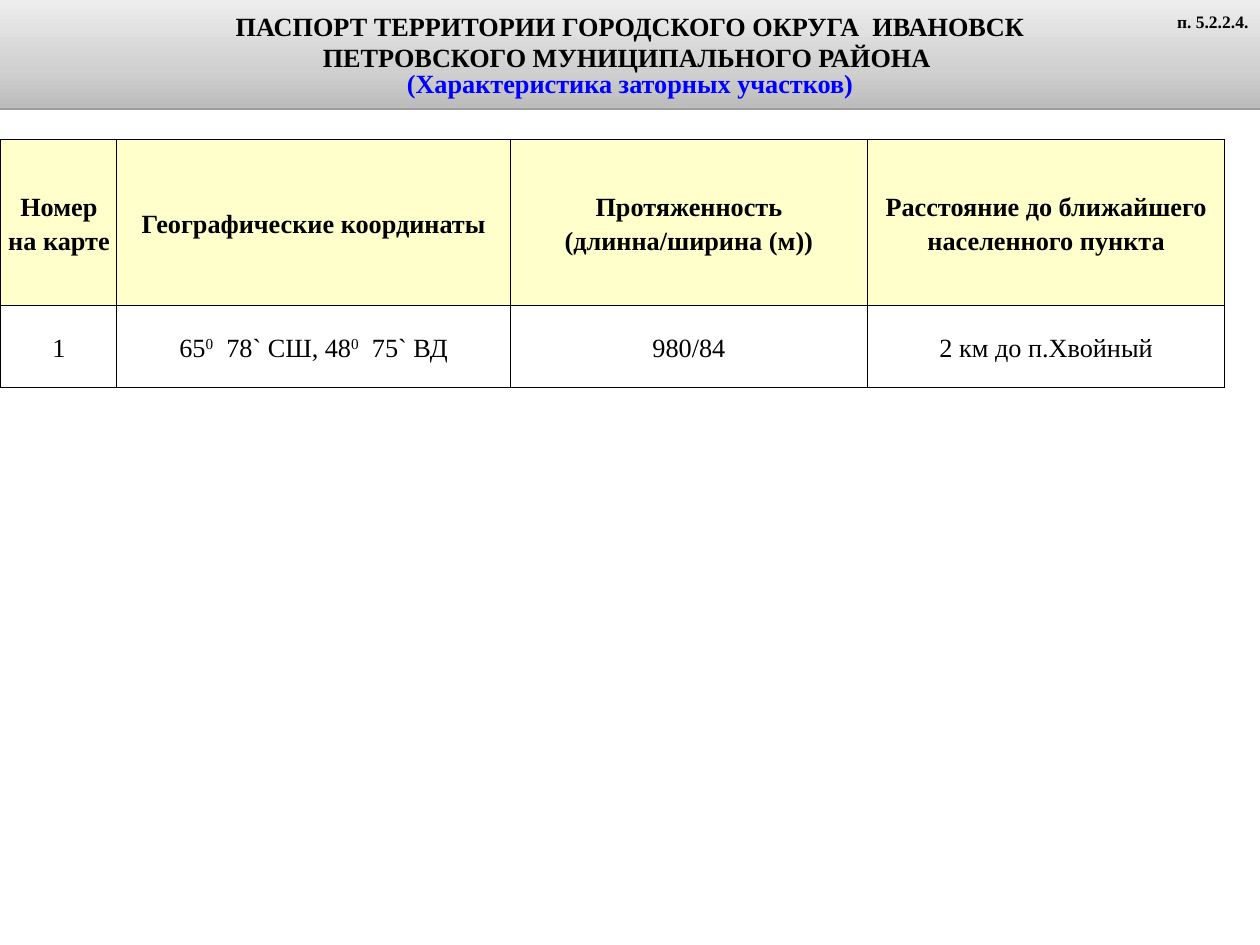
from lxml import etree
from pptx import Presentation
from pptx.dml.color import RGBColor
from pptx.enum.text import MSO_ANCHOR, MSO_AUTO_SIZE, PP_ALIGN
from pptx.util import Inches, Pt

CENTER = PP_ALIGN.CENTER
MIDDLE = MSO_ANCHOR.MIDDLE
NO_FIT = MSO_AUTO_SIZE.NONE
GROW = MSO_AUTO_SIZE.SHAPE_TO_FIT_TEXT
NS = 'xmlns:a="http://schemas.openxmlformats.org/drawingml/2006/main"'


def rgb(code):
    return RGBColor.from_string(code)


def add_run(para, text, size=21, bold=True, color="000000", raised=False):
    run = para.add_run()
    run.text = text
    font = run.font
    font.name = "Times New Roman"
    font.size = Pt(size)
    font.bold = bold
    font.color.rgb = rgb(color)
    if raised:
        run._r.get_or_add_rPr().set("baseline", "30000")


deck = Presentation()
deck.slide_width = Inches(14)
deck.slide_height = Inches(10.5)
slide = deck.slides.add_slide(deck.slide_layouts[5])

# Title banner
title = slide.shapes.title
title.left = title.top = Inches(0)
title.width, title.height = Inches(14), Inches(1.2)
stops = "".join(
    f'<a:gs pos="{pos * 1000}"><a:srgbClr val="{color}"/></a:gs>'
    for pos, color in [(0, "BCBCBC"), (35, "D0D0D0"), (100, "EDEDED")]
)
shade = f'<a:gradFill {NS}><a:gsLst>{stops}</a:gsLst><a:lin ang="16200000" scaled="1"/></a:gradFill>'
shadow = (
    f'<a:effectLst {NS}><a:outerShdw blurRad="0" dist="{Pt(1.6)}" dir="5400000" rotWithShape="0">'
    '<a:srgbClr val="000000"><a:alpha val="38000"/></a:srgbClr></a:outerShdw></a:effectLst>'
)
for part in (shade, shadow):
    title._element.spPr.append(etree.fromstring(part))

frame = title.text_frame
frame.auto_size = NO_FIT
frame.word_wrap = True
frame.vertical_anchor = MIDDLE
lines = [
    ("ПАСПОРТ ТЕРРИТОРИИ ГОРОДСКОГО ОКРУГА  ИВАНОВСК", "000000", 1.0),
    ("ПЕТРОВСКОГО МУНИЦИПАЛЬНОГО РАЙОНА ", "000000", 1.0),
    ("(Характеристика заторных участков)", "0000FF", 0.8),
]
for i, (text, color, space) in enumerate(lines):
    para = frame.add_paragraph() if i else frame.paragraphs[0]
    para.alignment = CENTER
    para.line_spacing = space
    add_run(para, text, color=color)

# Table: each cell is a list of runs, with every second run raised
rows = [
    [["Номер на карте"], ["Географические координаты"],
     ["Протяженность (длинна/ширина (м))"],
     ["Расстояние до ближайшего населенного пункта"]],
    [["1"], ["65", "0", "  78` СШ, 48", "0", "  75` ВД"],
     ["980/84"], ["2 км до п.Хвойный"]],
]
table = slide.shapes.add_table(
    2, 4, Inches(0.01), Inches(1.55), Inches(13.6), Inches(2.76)
).table
for col, width in zip(table.columns, (1.29, 4.37, 3.97, 3.97)):
    col.width = Inches(width)
for row, height in zip(table.rows, (1.84, 0.92)):
    row.height = Inches(height)

for r, row in enumerate(rows):
    head = r == 0
    for c, parts in enumerate(row):
        cell = table.cell(r, c)
        cell.vertical_anchor = MIDDLE
        cell.margin_left = cell.margin_right = Inches(0.07)
        cell.margin_top = cell.margin_bottom = Inches(0)
        para = cell.text_frame.paragraphs[0]
        para.alignment = CENTER
        para.line_spacing = 1.15
        for n, text in enumerate(parts):
            add_run(para, text, bold=head, raised=n % 2 == 1)
        props = cell._tc.get_or_add_tcPr()
        for side in ("lnL", "lnR", "lnT", "lnB"):
            props.append(etree.fromstring(
                f'<a:{side} {NS} w="{Pt(1)}"><a:solidFill><a:srgbClr val="000000"/>'
                f'</a:solidFill></a:{side}>'
            ))
        if head:
            cell.fill.solid()
            cell.fill.fore_color.rgb = rgb("FFFFCC")
        else:
            cell.fill.background()

# Section number
label = slide.shapes.add_textbox(Inches(12.98), Inches(0.07), Inches(1), Inches(0.34))
label.text_frame.word_wrap = False
label.text_frame.auto_size = GROW
add_run(label.text_frame.paragraphs[0], "п. 5.2.2.4.", size=14)

deck.save("out.pptx")
